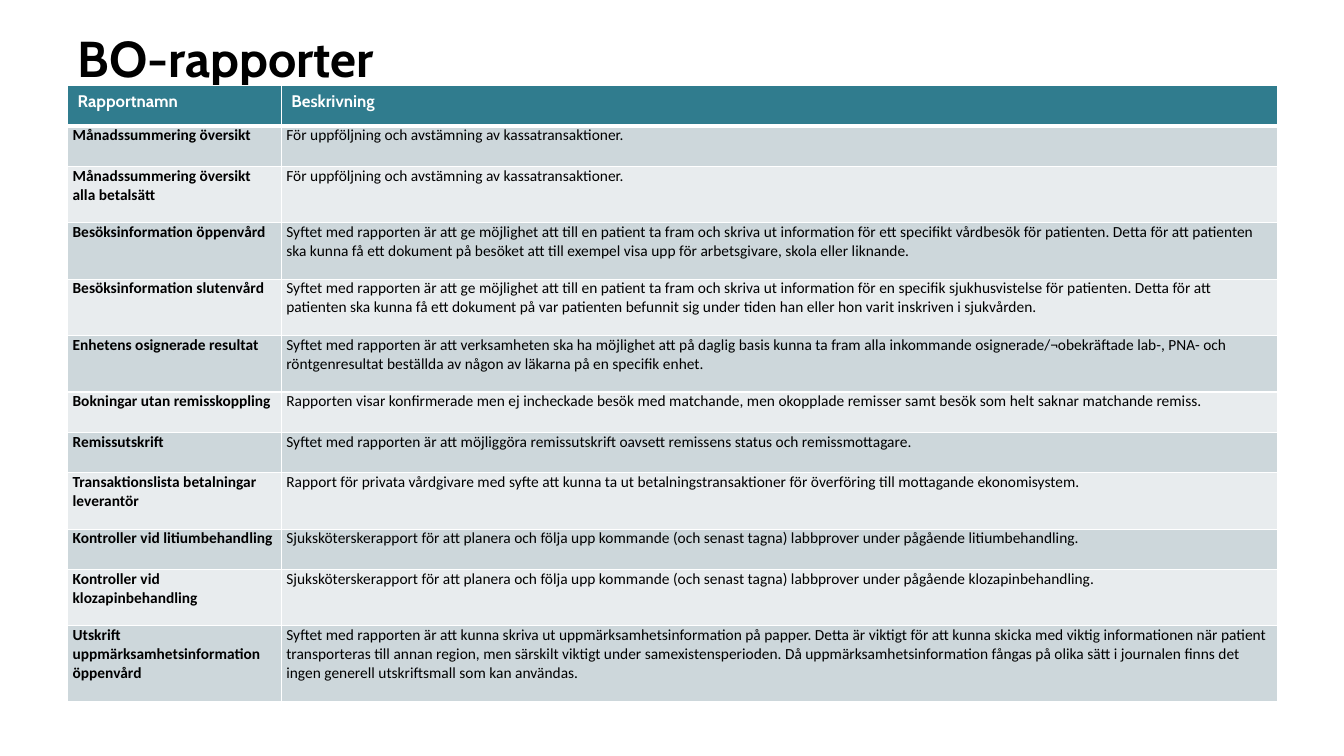
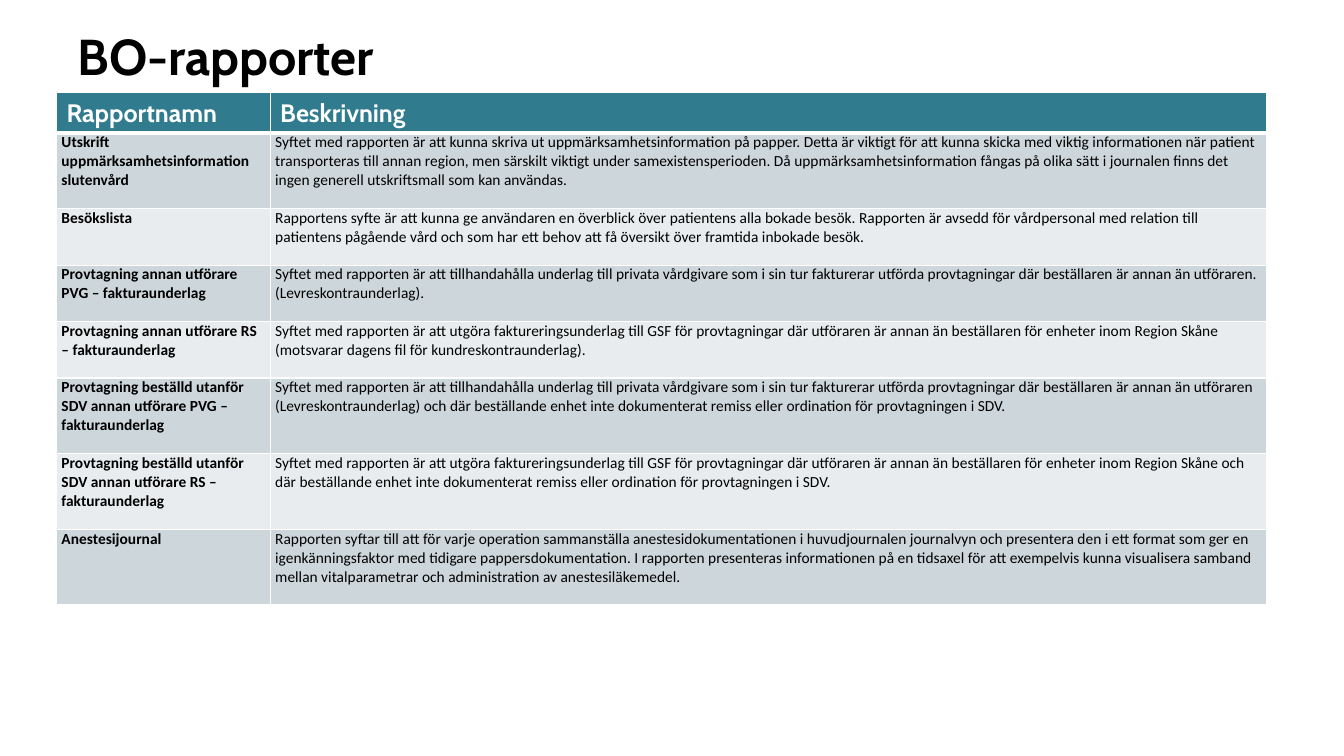
from lxml import etree
from pptx import Presentation
from pptx import util as u
from pptx.dml import color as dml
from pptx.enum import text
from pptx.oxml import ns

COLORS = {"header": "307C8E", "odd": "CDD7DB", "even": "E8ECEE", "white": "FFFFFF", "black": "000000"}
ROW_HEIGHTS = {1: 0.4, 2: 0.56, 3: 0.75}
HEADERS = ("Rapportnamn", "Beskrivning")
CASH_FOLLOW_UP = "För uppföljning och avstämning av kassatransaktioner."
LAB_FOLLOW_UP = (
    "Sjuksköterskerapport för att planera och följa upp kommande (och senast tagna) labbprover "
    "under pågående {}behandling."
)
VISIT_PURPOSE = "Syftet med rapporten är att ge möjlighet att till en patient ta fram och skriva ut information för "
ALERT_PURPOSE = (
    "Syftet med rapporten är att kunna skriva ut uppmärksamhetsinformation på papper. Detta är viktigt för "
    "att kunna skicka med viktig informationen när patient transporteras till annan region, men särskilt "
    "viktigt under samexistensperioden. Då uppmärksamhetsinformation fångas på olika sätt i journalen finns "
    "det ingen generell utskriftsmall som kan användas."
)
PRIVATE_INVOICING = (
    "Syftet med rapporten är att tillhandahålla underlag till privata vårdgivare som i sin tur fakturerar "
    "utförda provtagningar där beställaren är annan än utföraren"
)
REGION_INVOICING = (
    "Syftet med rapporten är att utgöra faktureringsunderlag till GSF för provtagningar där utföraren är "
    "annan än beställaren för enheter inom Region Skåne"
)
UNDOCUMENTED = (
    " och där beställande enhet inte dokumenterat remiss eller ordination för provtagningen i SDV."
)

FIRST_REPORTS = [
    (1, "Månadssummering översikt", CASH_FOLLOW_UP),
    (2, "Månadssummering översikt alla betalsätt", CASH_FOLLOW_UP),
    (2, "Besöksinformation öppenvård", VISIT_PURPOSE
     + "ett specifikt vårdbesök för patienten. Detta för att patienten ska kunna få ett dokument på besöket "
     "att till exempel visa upp för arbetsgivare, skola eller liknande."),
    (2, "Besöksinformation slutenvård", VISIT_PURPOSE
     + "en specifik sjukhusvistelse för patienten. Detta för att patienten ska kunna få ett dokument på var "
     "patienten befunnit sig under tiden han eller hon varit inskriven i sjukvården."),
    (2, "Enhetens osignerade resultat",
     "Syftet med rapporten är att verksamheten ska ha möjlighet att på daglig basis kunna ta fram alla "
     "inkommande osignerade/¬obekräftade lab-, PNA- och röntgenresultat beställda av någon av läkarna på en "
     "specifik enhet."),
    (1, "Bokningar utan remisskoppling",
     "Rapporten visar konfirmerade men ej incheckade besök med matchande, men okopplade remisser samt besök "
     "som helt saknar matchande remiss."),
    (1, "Remissutskrift",
     "Syftet med rapporten är att möjliggöra remissutskrift oavsett remissens status och remissmottagare."),
    (2, "Transaktionslista betalningar leverantör",
     "Rapport för privata vårdgivare med syfte att kunna ta ut betalningstransaktioner för överföring till "
     "mottagande ekonomisystem."),
    (1, "Kontroller vid litiumbehandling", LAB_FOLLOW_UP.format("litium")),
    (2, "Kontroller vid klozapinbehandling", LAB_FOLLOW_UP.format("klozapin")),
    (3, "Utskrift uppmärksamhetsinformation öppenvård", ALERT_PURPOSE),
]
SECOND_REPORTS = [
    (3, "Utskrift uppmärksamhetsinformation slutenvård", ALERT_PURPOSE),
    (2, "Besökslista",
     "Rapportens syfte är att kunna ge användaren en överblick över patientens alla bokade besök. Rapporten "
     "är avsedd för vårdpersonal med relation till patientens pågående vård och som har ett behov att få "
     "översikt över framtida inbokade besök."),
    (2, "Provtagning annan utförare PVG – fakturaunderlag", PRIVATE_INVOICING + ". (Levreskontraunderlag)."),
    (2, "Provtagning annan utförare RS – fakturaunderlag",
     REGION_INVOICING + " (motsvarar dagens fil för kundreskontraunderlag)."),
    (3, "Provtagning beställd utanför SDV annan utförare PVG – fakturaunderlag",
     PRIVATE_INVOICING + " (Levreskontraunderlag)" + UNDOCUMENTED),
    (3, "Provtagning beställd utanför SDV annan utförare RS – fakturaunderlag", REGION_INVOICING + UNDOCUMENTED),
    (3, "Anestesijournal",
     "Rapporten syftar till att för varje operation sammanställa anestesidokumentationen i huvudjournalen "
     "journalvyn och presentera den i ett format som ger en igenkänningsfaktor med tidigare "
     "pappersdokumentation. I rapporten presenteras informationen på en tidsaxel för att exempelvis kunna "
     "visualisera samband mellan vitalparametrar och administration av anestesiläkemedel."),
]


def write_text(frame, content, size=11, font="Calibri", color="black", bold=False, spacing=None):
    paragraph = frame.paragraphs[0]
    paragraph.line_spacing = spacing
    run = paragraph.add_run()
    run.text = content
    run.font.size = u.Pt(size)
    run.font.name = font
    run.font.bold = bold
    run.font.color.rgb = dml.RGBColor.from_string(COLORS[color])


class ReportDeck:
    """Hold the report style and the slide being built."""

    def __init__(self):
        self.presentation = Presentation()
        self.presentation.slide_width = u.Inches(13.33)
        self.presentation.slide_height = u.Inches(7.5)
        self.slide = None

    def add_slide(self):
        self.slide = self.presentation.slides.add_slide(self.presentation.slide_layouts[6])

    def add_title(self, content, top):
        box = self.slide.shapes.add_textbox(u.Inches(0.67), u.Inches(top), u.Inches(12), u.Inches(0.82))
        box.text_frame.word_wrap = True
        box.text_frame.vertical_anchor = text.MSO_ANCHOR.MIDDLE
        write_text(box.text_frame, content, size=36, font="Cabin", bold=True, spacing=1.1)

    def style_cell(self, cell, fill, top_width=1, bottom_width=1):
        properties = cell._tc.get_or_add_tcPr()
        for side, width in (("L", 1), ("R", 1), ("T", top_width), ("B", bottom_width)):
            line = etree.SubElement(properties, ns.qn(f"a:ln{side}"), w=str(u.Pt(width)))
            solid = etree.SubElement(line, ns.qn("a:solidFill"))
            etree.SubElement(solid, ns.qn("a:srgbClr"), val=COLORS["white"])
        cell.fill.solid()
        cell.fill.fore_color.rgb = dml.RGBColor.from_string(COLORS[fill])

    def add_reports(self, reports, left, top, header_size):
        heights = [0.4] + [ROW_HEIGHTS[lines] for lines, *_ in reports]
        table = self.slide.shapes.add_table(
            len(heights), 2, u.Inches(left), u.Inches(top), u.Inches(12), u.Inches(sum(heights))
        ).table
        for column, width in zip(table.columns, (2.12, 9.88)):
            column.width = u.Inches(width)
        for row, height in zip(table.rows, heights):
            row.height = u.Inches(height)
        for cell, header in zip(table.rows[0].cells, HEADERS):
            self.style_cell(cell, "header", bottom_width=3)
            write_text(cell.text_frame, header, size=header_size, font="Cabin", color="white", bold=True)
        for number, (_, *contents) in enumerate(reports, start=1):
            for column, content in enumerate(contents):
                cell = table.cell(number, column)
                cell.margin_left = cell.margin_right = u.Inches(0.05)
                cell.margin_top = cell.margin_bottom = 0
                self.style_cell(cell, "odd" if number % 2 else "even", top_width=3 if number == 1 else 1)
                write_text(cell.text_frame, content, bold=column == 0)

    def save(self):
        self.presentation.save("out.pptx")


def main():
    deck = ReportDeck()
    for reports, title_top, left, top, header_size in (
        (FIRST_REPORTS, 0.13, 0.67, 0.85, 12),
        (SECOND_REPORTS, 0.11, 0.56, 0.92, 18),
    ):
        deck.add_slide()
        deck.add_title("BO-rapporter", title_top)
        deck.add_reports(reports, left, top, header_size)
    deck.save()


if __name__ == "__main__":
    main()
